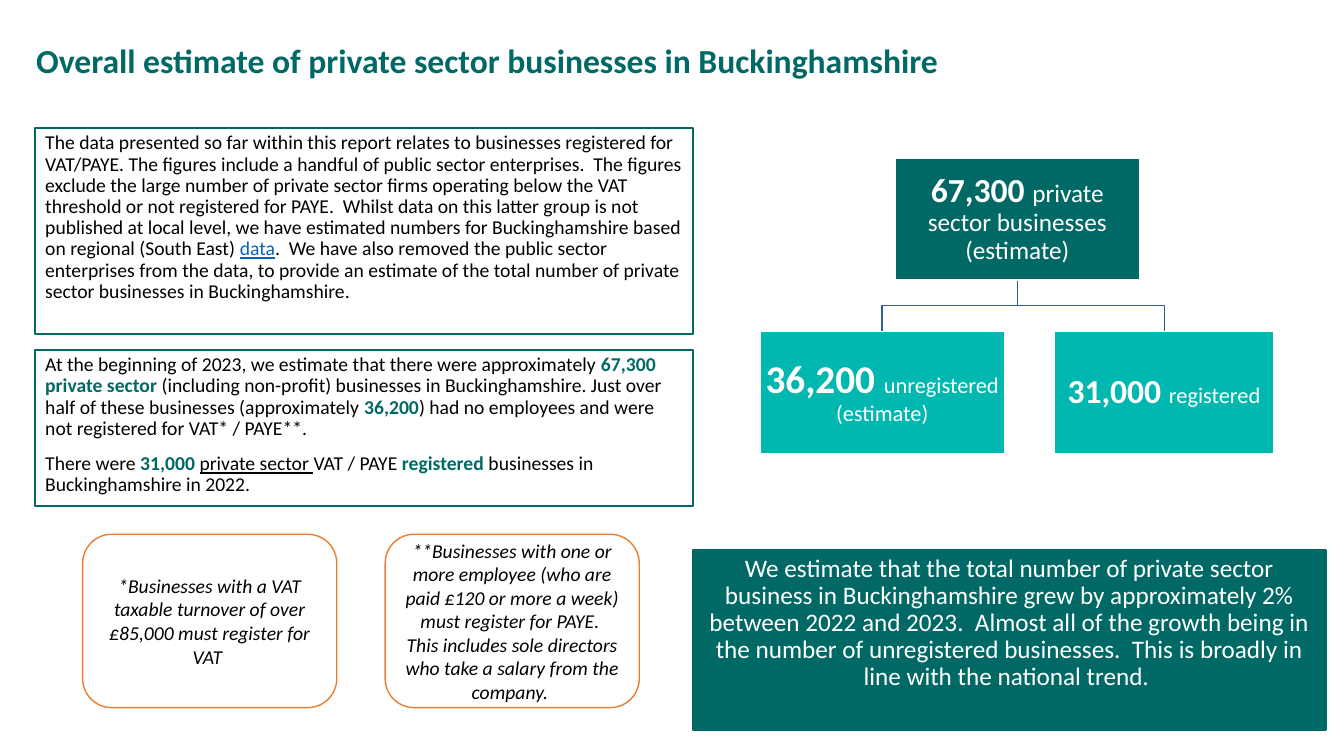
from pptx import Presentation
from pptx.dml.color import RGBColor
from pptx.enum.shapes import MSO_SHAPE
from pptx.enum.text import MSO_ANCHOR, PP_ALIGN
from pptx.util import Inches, Pt

TEAL, TURQUOISE, ORANGE = "006965", "00B8AF", "ED7D31"
WHITE, BLACK, LINK_BLUE, BRANCH_BLUE = "FFFFFF", "000000", "0563C1", "365B9D"


def color(hex_value):
    return RGBColor.from_string(hex_value)


def write(shape, paragraphs, size, ink, align=PP_ALIGN.LEFT, anchor=MSO_ANCHOR.TOP,
          spacing=0.9, before=0, inset=None):
    frame = shape.text_frame
    frame.word_wrap = True
    frame.vertical_anchor = anchor
    if inset is not None:
        frame.margin_left = frame.margin_right = Inches(inset)
        frame.margin_top = frame.margin_bottom = Inches(inset)
    for index, runs in enumerate(paragraphs):
        paragraph = frame.add_paragraph() if index else frame.paragraphs[0]
        paragraph.alignment = align
        paragraph.line_spacing = spacing
        paragraph.space_before = Pt(before)
        for text, style in runs:
            run = paragraph.add_run()
            run.text = text
            font = run.font
            font.name = "Calibri"
            font.size = Pt(style.get("size", size))
            font.bold = style.get("bold", False)
            font.italic = style.get("italic", False)
            font.underline = style.get("underline", False)
            font.color.rgb = color(style.get("ink", ink))


def add_box(kind, left, top, width, height, fill, line, line_width):
    box = slide.shapes.add_shape(kind, Inches(left), Inches(top), Inches(width), Inches(height))
    box.shadow.inherit = False
    if fill:
        box.fill.solid()
        box.fill.fore_color.rgb = color(fill)
    else:
        box.fill.background()
    box.line.color.rgb = color(line)
    box.line.width = Pt(line_width)
    return box


prs = Presentation()
prs.slide_width, prs.slide_height = Inches(13.33), Inches(7.5)
slide = prs.slides.add_slide(prs.slide_layouts[6])

title = slide.shapes.add_textbox(Inches(0.26), Inches(0.25), Inches(12.89), Inches(0.74))
write(title, [[("Overall estimate of private sector businesses in Buckinghamshire", {"bold": True})]],
      24, TEAL, anchor=MSO_ANCHOR.MIDDLE)

trunk_x, total_bottom, fork_y, split_top = 10.09, 2.78, 3.03, 3.29
for branch_x in (11.55, 8.75):
    builder = slide.shapes.build_freeform(Inches(trunk_x), Inches(total_bottom))
    builder.add_line_segments(
        [(Inches(x), Inches(y)) for x, y in
         ((trunk_x, fork_y), (branch_x, fork_y), (branch_x, split_top))], close=False)
    branch = builder.convert_to_shape()
    branch.shadow.inherit = False
    branch.fill.background()
    branch.line.color.rgb = color(BRANCH_BLUE)
    branch.line.width = Pt(1)

hierarchy = [
    (8.88, 1.57, 2.42, TEAL, "67,300 ", 24, "private sector businesses (estimate)", 18),
    (7.54, split_top, 2.42, TURQUOISE, "36,200 ", 28, "unregistered (estimate)", 16),
    (10.46, split_top, 2.17, TURQUOISE, "31,000 ", 24, "registered", 16),
]
for left, top, width, fill, count, count_size, label, label_size in hierarchy:
    node = add_box(MSO_SHAPE.RECTANGLE, left, top, width, 1.21, fill, WHITE, 1)
    write(node, [[(count, {"bold": True, "size": count_size}), (label, {})]],
          label_size, WHITE, PP_ALIGN.CENTER, MSO_ANCHOR.MIDDLE, inset=0.02)

footnotes = [
    (0.82, "*Businesses with a VAT taxable turnover of over £85,000 must register for VAT "),
    (3.82, "**Businesses with one or more employee (who are paid £120 or more a week) must "
           "register for PAYE.  This includes sole directors who take a salary from the company. "),
]
for left, text in footnotes:
    footnote = add_box(MSO_SHAPE.ROUNDED_RECTANGLE, left, 5.3, 2.52, 1.72, WHITE, ORANGE, 1)
    write(footnote, [[(text, {"italic": True})]], 14, BLACK,
          PP_ALIGN.CENTER, MSO_ANCHOR.MIDDLE, spacing=1.0)

highlight = {"ink": TEAL, "bold": True}
background = [[
    ("The data presented so far within this report relates to businesses registered for VAT/PAYE. "
     "The figures include a handful of public sector enterprises.  The figures exclude the large "
     "number of private sector firms operating below the VAT threshold or not registered for PAYE.  "
     "Whilst data on this latter group is not published at local level, we have estimated numbers "
     "for Buckinghamshire based on regional (South East) ", {}),
    ("data", {"ink": LINK_BLUE, "underline": True}),
    (".  We have also removed the public sector enterprises from the data, to provide an estimate "
     "of the total number of private sector businesses in Buckinghamshire.", {}),
]]
findings = [
    [("At the beginning of 2023, we estimate that there were approximately ", {}),
     ("67,300 private sector ", highlight),
     ("(including non-profit) businesses in Buckinghamshire. Just over half of these businesses "
      "(approximately ", {}),
     ("36,200", highlight),
     (") had no employees and were not registered for VAT* / PAYE**.", {})],
    [("There were ", {}),
     ("31,000 ", highlight),
     ("private sector ", {"underline": True}),
     ("VAT / PAYE ", {}),
     ("registered", highlight),
     (" businesses in Buckinghamshire in 2022.", {})],
]
for top, height, paragraphs in ((1.27, 2.04, background), (3.47, 1.55, findings)):
    panel = add_box(MSO_SHAPE.RECTANGLE, 0.35, top, 6.52, height, None, TEAL, 1.5)
    write(panel, paragraphs, 14, BLACK, before=10)

growth = add_box(MSO_SHAPE.RECTANGLE, 6.87, 5.46, 6.28, 1.78, TEAL, TEAL, 1.5)
write(growth, [[
    ("We estimate that the total number of private sector business in Buckinghamshire grew by "
     "approximately 2% between 2022 and 2023.  Almost all of the growth being in the number of "
     "unregistered businesses.  This is broadly in line with the national trend. ", {}),
]], 18, WHITE, PP_ALIGN.CENTER, before=10)

prs.save("out.pptx")
